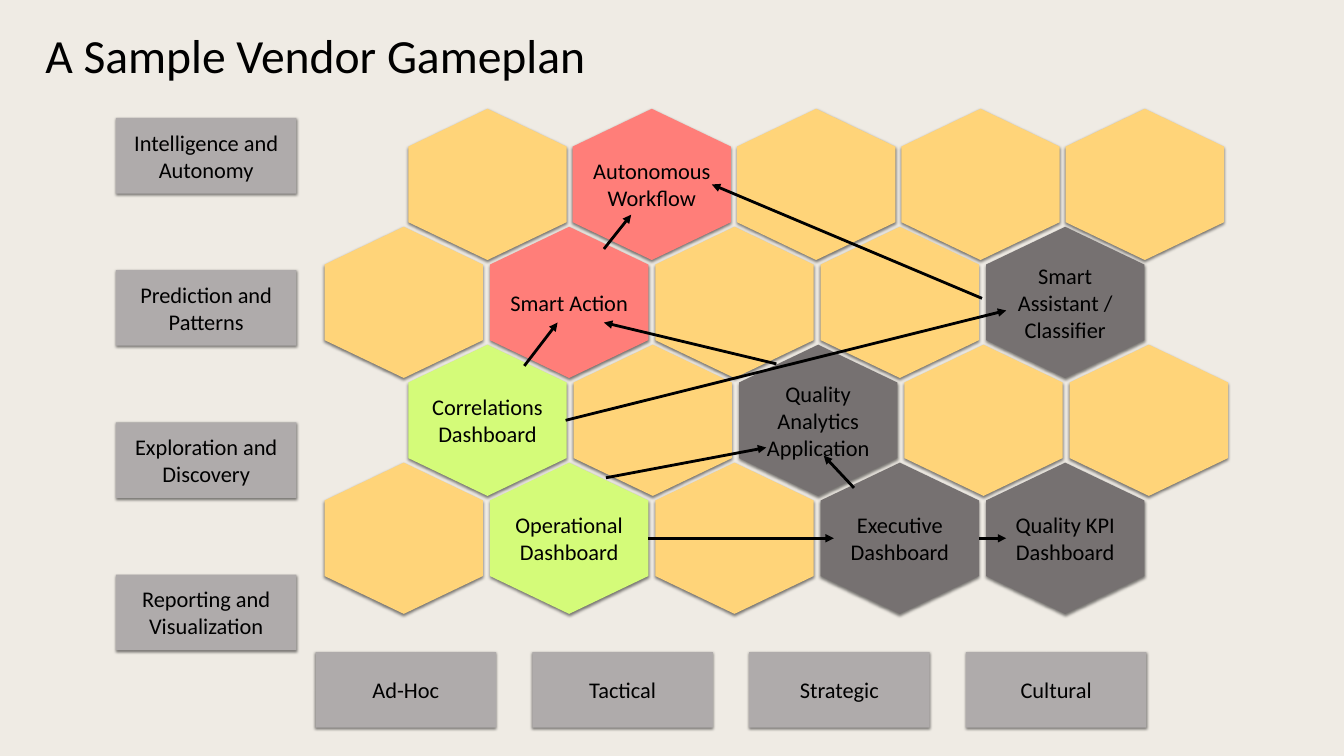
import pptx
import pptx.util
import pptx.dml.color
import pptx.enum.shapes
import pptx.enum.text
import pptx.oxml
import pptx.oxml.ns
from pptx.util import Inches

TITLE = "A Sample Vendor Gameplan"
STAGES = ["Intelligence and Autonomy", "Prediction and Patterns",
          "Exploration and Discovery", "Reporting and Visualization"]
MATURITY = ["Ad-Hoc", "Tactical", "Strategic", "Cultural"]

# Each row: left edge, pitch, then (text, role) for each hexagon
OPEN = ("", "open")
HEX_ROWS = [
    (4.05, 1.63, [OPEN, ("Autonomous Workflow", "automation"), OPEN, OPEN, OPEN]),
    (3.22, 1.64, [OPEN, ("Smart Action", "automation"), OPEN, OPEN,
                  ("Smart Assistant / Classifier", "quality")]),
    (4.05, 1.64, [("Correlations Dashboard", "dashboard"), OPEN,
                  ("Quality Analytics Application", "quality"), OPEN, OPEN]),
    (3.22, 1.64, [OPEN, ("Operational Dashboard", "dashboard"), OPEN,
                  ("Executive Dashboard", "quality"),
                  ("Quality KPI Dashboard", "quality")]),
]
ARROWS = [  # start, end
    ((5.61, 4.17), (9.98, 3.08)),
    ((8.47, 4.84), (8.17, 4.52)),
    ((6.43, 5.34), (8.27, 5.34)),
    ((5.2, 3.63), (5.53, 3.2)),
    ((7.7, 3.61), (5.99, 3.2)),
    ((5.99, 2.47), (6.26, 2.13)),
    ((9.74, 2.96), (7.06, 1.83)),
    ((9.71, 5.34), (9.98, 5.34)),
    ((6.01, 4.74), (7.6, 4.44)),
]

THEME = {
    "font": "Calibri", "title_size": 34, "body_size": 16, "arrow_width": 2,
    "background": "EFEBE4", "ink": "000000", "label": "AFABAB",
    "open": "FFD479", "automation": "FF7E79", "quality": "767171",
    "dashboard": "D4FB79",
}
HEX_W, HEX_H, HEX_TOP, HEX_ROW_PITCH = 1.57, 1.5, 1.08, 1.17
LABEL_W, LABEL_H = 1.79, 0.75
INSET = 0.05


def color(name):
    return pptx.dml.color.RGBColor.from_string(THEME[name])


def write(shape, text, size, align, wrap=True):
    tf = shape.text_frame
    tf.text = text
    tf.word_wrap = wrap
    tf.vertical_anchor = pptx.enum.text.MSO_ANCHOR.MIDDLE
    tf.margin_left = tf.margin_right = Inches(INSET)
    tf.margin_top = tf.margin_bottom = Inches(INSET)
    p = tf.paragraphs[0]
    p.alignment = align
    for r in p.runs:
        r.font.name = THEME["font"]
        r.font.size = pptx.util.Pt(THEME[size])
        r.font.color.rgb = color("ink")


def finish(shape, fill, text):
    """Give a block its fill, soft shadow and centred text."""
    shape.fill.solid()
    shape.fill.fore_color.rgb = color(fill)
    shape.line.fill.background()
    shape.shadow.inherit = False
    effects = shape._element.spPr.find(pptx.oxml.ns.qn("a:effectLst"))
    effects.append(pptx.oxml.parse_xml(
        f'<a:outerShdw {pptx.oxml.ns.nsdecls("a")} blurRad="25400" dist="12700" '
        'dir="5400000" rotWithShape="0"><a:srgbClr val="000000">'
        '<a:alpha val="50000"/></a:srgbClr></a:outerShdw>'))
    if text:
        write(shape, text, "body_size", pptx.enum.text.PP_ALIGN.CENTER)


def add_label(s, x, y, text):
    sp = s.shapes.add_shape(pptx.enum.shapes.MSO_SHAPE.RECTANGLE, Inches(x),
                            Inches(y), Inches(LABEL_W), Inches(LABEL_H))
    finish(sp, "label", text)


def add_hexagon(s, x, y, text, role):
    mid, right = x + HEX_W / 2, x + HEX_W
    upper, lower, bottom = y + HEX_H / 4, y + HEX_H * 3 / 4, y + HEX_H
    corners = [(mid, y), (right, upper), (right, lower),
               (mid, bottom), (x, lower), (x, upper)]
    points = [(Inches(px), Inches(py)) for px, py in corners]
    builder = s.shapes.build_freeform(*points[0])
    builder.add_line_segments(points[1:], close=True)
    finish(builder.convert_to_shape(), role, text)


def add_arrow(s, start, end):
    line = s.shapes.add_connector(pptx.enum.shapes.MSO_CONNECTOR.STRAIGHT,
                                  *map(Inches, start + end))
    line.line.color.rgb = color("ink")
    line.line.width = pptx.util.Pt(THEME["arrow_width"])
    ns = pptx.oxml.ns.nsdecls("a")
    line.line._get_or_add_ln().append(
        pptx.oxml.parse_xml(f'<a:tailEnd {ns} type="triangle"/>'))
    line._element.spPr.append(pptx.oxml.parse_xml(f"<a:effectLst {ns}/>"))


def main():
    prs = pptx.Presentation()
    prs.slide_width, prs.slide_height = Inches(13.33), Inches(7.5)
    s = prs.slides.add_slide(prs.slide_layouts[6])
    s.background.fill.solid()
    s.background.fill.fore_color.rgb = color("background")

    title = s.shapes.add_textbox(Inches(0.4), Inches(0.21),
                                 Inches(5.64), Inches(0.66))
    write(title, TITLE, "title_size", pptx.enum.text.PP_ALIGN.LEFT, wrap=False)

    for i, text in enumerate(STAGES):
        add_label(s, 1.15, 1.17 + i * 1.51, text)
    for i, text in enumerate(MATURITY):
        add_label(s, 3.13 + i * 2.15, 6.47, text)
    for row, (left, pitch, cells) in enumerate(HEX_ROWS):
        for col, (text, role) in enumerate(cells):
            add_hexagon(s, left + col * pitch, HEX_TOP + row * HEX_ROW_PITCH,
                        text, role)
    for start, end in ARROWS:
        add_arrow(s, start, end)

    prs.save("out.pptx")


if __name__ == "__main__":
    main()
